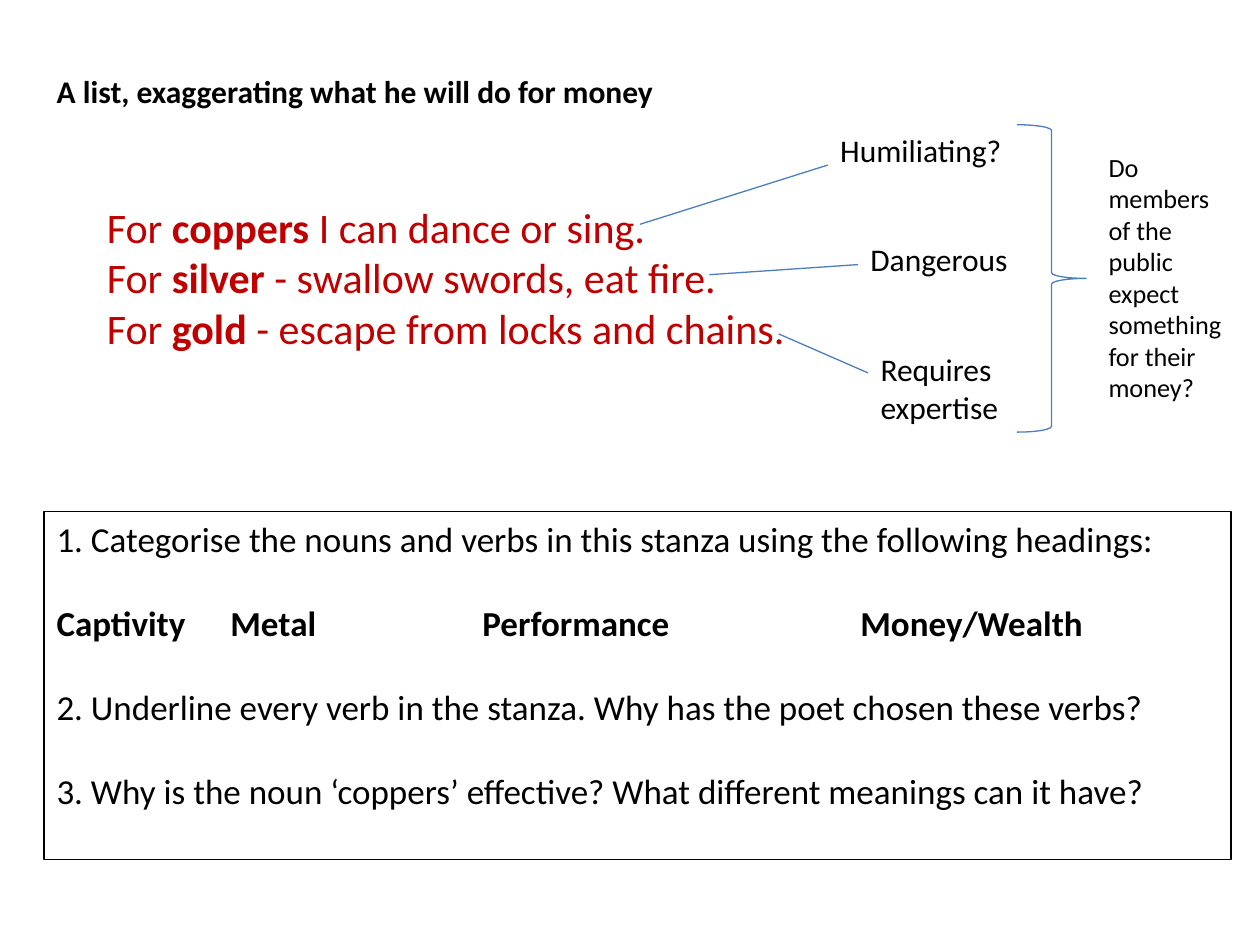
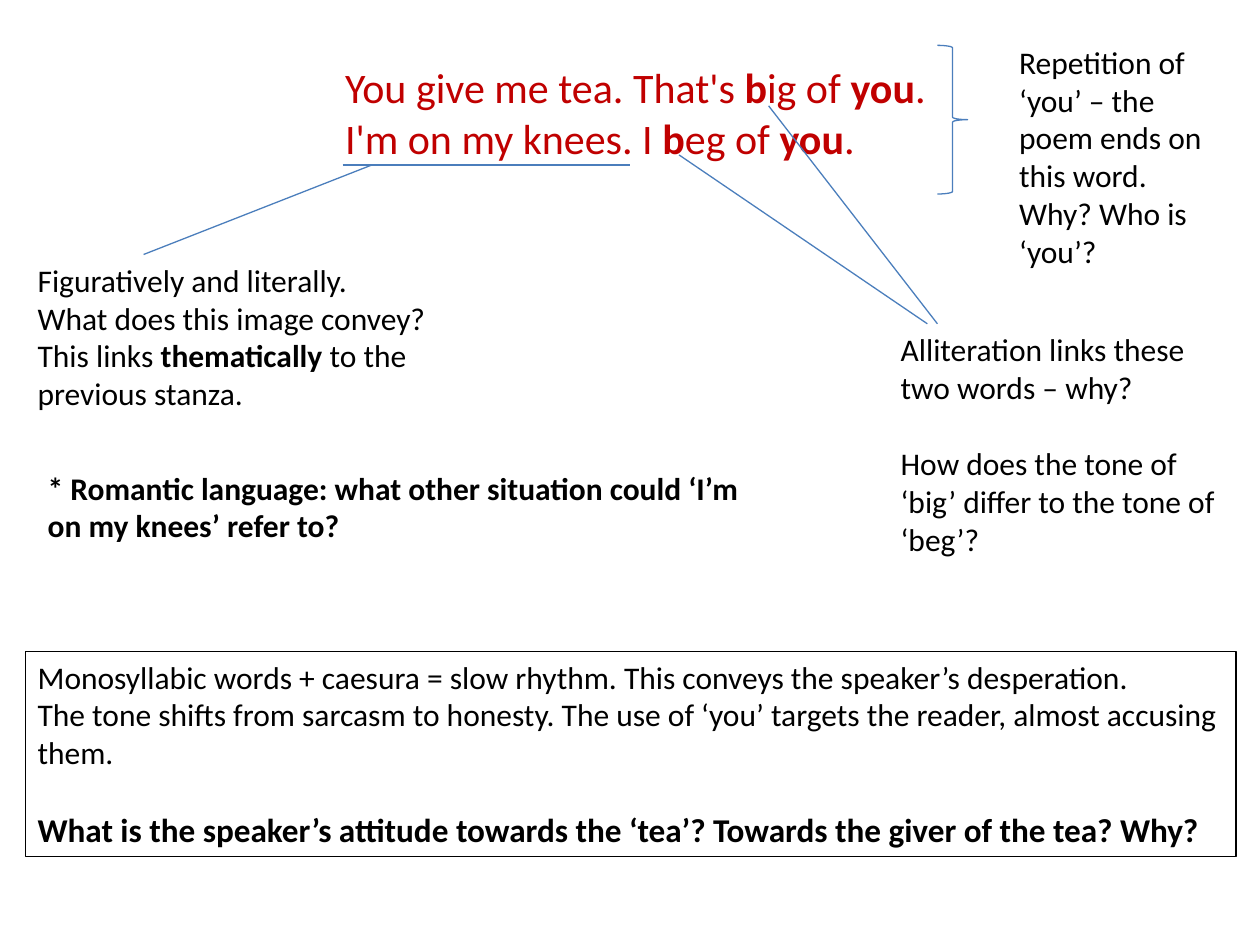
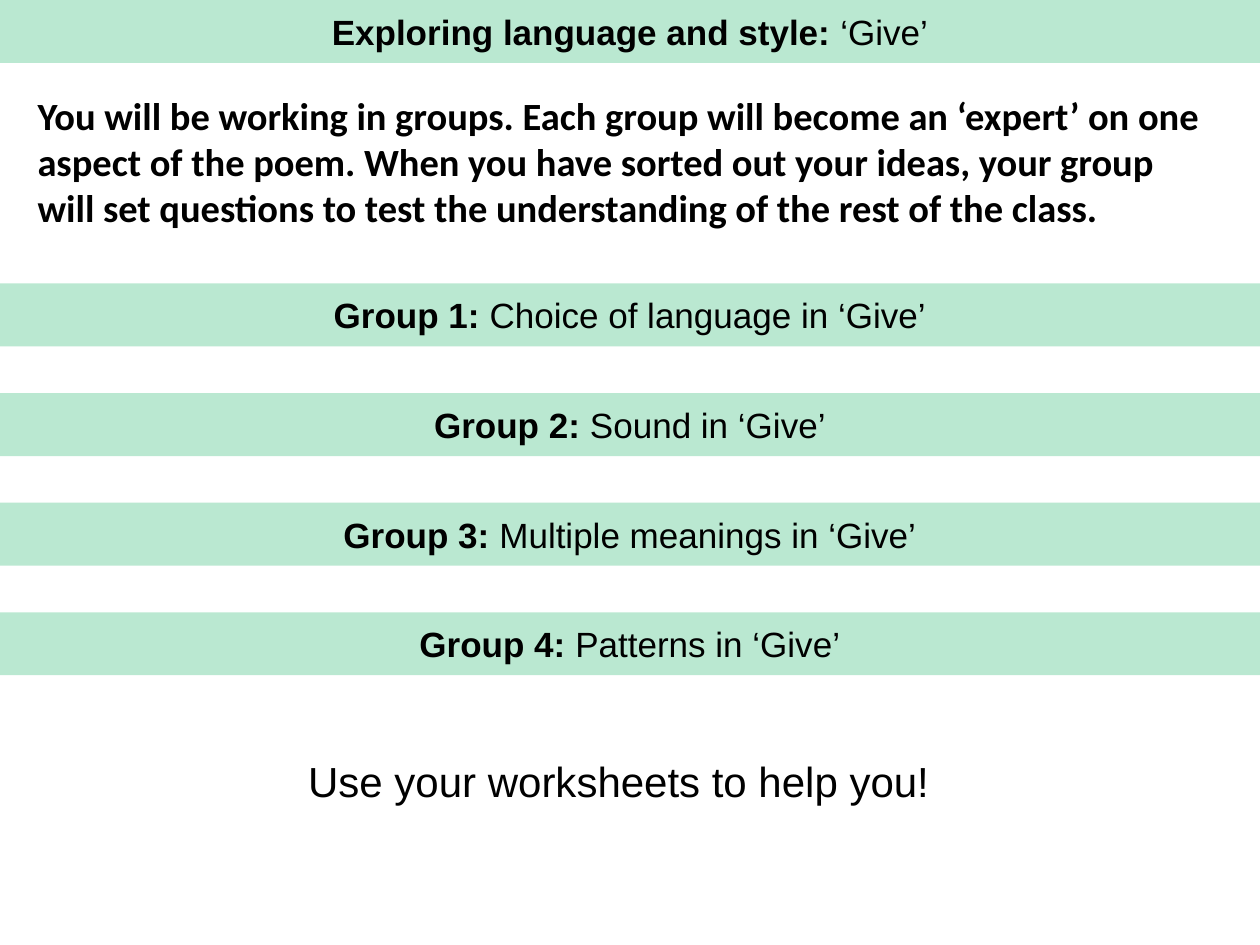
from lxml import etree
from pptx import Presentation
from pptx.dml.color import RGBColor
from pptx.enum.shapes import MSO_CONNECTOR, MSO_SHAPE
from pptx.enum.text import MSO_ANCHOR, MSO_AUTO_SIZE, PP_ALIGN
from pptx.oxml.ns import qn
from pptx.util import Inches, Pt

LEFT, CENTER = PP_ALIGN.LEFT, PP_ALIGN.CENTER
TOP, MIDDLE = MSO_ANCHOR.TOP, MSO_ANCHOR.MIDDLE
FIXED = MSO_AUTO_SIZE.NONE
STRAIGHT = MSO_CONNECTOR.STRAIGHT
RECT, BRACE = MSO_SHAPE.RECTANGLE, MSO_SHAPE.RIGHT_BRACE

BLACK, RED, BLUE, MINT = "000000", "C00000", "4B7EBC", "BAE8D1"
BODY, HEAD = "Calibri", "Arial"
TITLE_ONLY, BLANK = 5, 6
BAND_H = 0.5


def color(code):
    return RGBColor.from_string(code)


def inches(*sizes):
    return [Inches(size) for size in sizes]


def set_tabs(para, stops):
    tabs = etree.SubElement(para._p.get_or_add_pPr(), qn("a:tabLst"))
    for stop in stops:
        etree.SubElement(tabs, qn("a:tab"), pos=str(Inches(stop)), algn="l")


def write(shape, lines, size=18, ink=BLACK, face=BODY, align=LEFT,
          anchor=TOP, gaps=None, tabs=()):
    frame = shape.text_frame
    frame.word_wrap = True
    frame.auto_size = FIXED
    frame.vertical_anchor = anchor
    for i, line in enumerate(lines):
        para = frame.paragraphs[0] if i == 0 else frame.add_paragraph()
        para.alignment = align
        para.space_before = Pt((gaps or {}).get(i, 0))
        if "\t" in line:
            set_tabs(para, tabs)
        font = para.font
        font.name, font.size = face, Pt(size)
        font.color.rgb = color(ink)
        parts = line.split("**")
        whole = len(parts) == 3 and not parts[0] and not parts[2]
        font.bold = whole
        for j, part in enumerate(parts):
            if part:
                run = para.add_run()
                run.text = part
                if len(parts) > 1 and not whole:
                    run.font.bold = j % 2 == 1
    return frame


def add_text(slide, box, lines, **style):
    return write(slide.shapes.add_textbox(*inches(*box)), lines, **style)


def add_form(slide, kind, box, line=None, fill=None):
    shape = slide.shapes.add_shape(kind, *inches(*box))
    shape.shadow.inherit = False
    paint(shape, line, fill)
    return shape


def paint(shape, line, fill):
    if fill:
        shape.fill.solid()
        shape.fill.fore_color.rgb = color(fill)
    else:
        shape.fill.background()
    if line:
        shape.line.color.rgb = color(line)
        shape.line.width = Pt(0.75)
    else:
        shape.line.fill.background()


def add_lines(slide, x, y, ends):
    for x1, y1, x2, y2 in ends:
        link = slide.shapes.add_connector(
            STRAIGHT, *inches(x + x1, y + y1, x + x2, y + y2))
        link.line.color.rgb = color(BLUE)
        link.line.width = Pt(0.75)
        etree.SubElement(link._element.spPr, qn("a:effectLst"))


def add_notes(slide, x, y, notes):
    for left, top, width, height, lines, size in notes:
        add_text(slide, (x + left, y + top, width, height), lines, size=size)


def add_title(slide, box, text, **style):
    title = slide.shapes.title
    title.left, title.top, title.width, title.height = inches(*box)
    write(title, [text], **style)
    return title


def add_band(slide, box, text):
    write(add_form(slide, RECT, box, fill=MINT), [text], size=20,
          face=HEAD, align=CENTER, anchor=MIDDLE)


def add_task(slide, box, lines, **style):
    return write(add_form(slide, RECT, box, line=BLACK), lines, **style)


def list_verse(slide, x, y):
    add_text(slide, (x, y + 0.56, 5.61, 1.31), [
        "For **coppers** I can dance or sing.",
        "For **silver** - swallow swords, eat fire.",
        "For **gold** - escape from locks and chains.",
    ], size=24, ink=RED)
    add_lines(slide, x, y, [
        (4.33, 0.79, 5.82, 0.32),
        (4.88, 1.19, 6.06, 1.11),
        (5.43, 1.66, 6.14, 1.97),
    ])
    add_notes(slide, x, y, [
        (5.82, 0, 1.5, 0.4, ["Humiliating?"], 18),
        (6.06, 0.87, 1.3, 0.4, ["Dangerous"], 18),
        (6.14, 1.74, 1.5, 0.71, ["Requires expertise"], 18),
        (7.95, 0.16, 1.1, 2.12, ["Do members of the public expect "
                                 "something for their money?"], 15),
    ])
    add_form(slide, BRACE, (x + 7.32, y, 0.55, 2.44), line=BLUE)


def end_verse(slide, x, y):
    add_text(slide, (x + 2.44, y + 0.15, 5, 0.91), [
        "You give me tea. That's **b**ig of **you**.",
        "I'm on my knees. I **b**eg of **you**.",
    ], size=24, ink=RED)
    add_lines(slide, x, y, [
        (5.19, 0.94, 7.16, 2.28),
        (5.9, 0.55, 7.24, 2.28),
        (2.52, 1.02, 4.8, 1.02),
        (2.75, 1.02, 0.94, 1.73),
    ])
    add_form(slide, BRACE, (x + 7.24, y + 0.07, 0.24, 1.18), line=BLUE)
    add_notes(slide, x, y, [
        (7.79, 0, 1.65, 1.92, ["Repetition of ‘you’ – the poem ends on "
                               "this word. Why? Who is ‘you’?"], 18),
        (0, 1.73, 3.31, 1.31, [
            "Figuratively and literally.",
            "What does this image convey?",
            "This links **thematically** to the previous stanza."], 18),
        (0.08, 3.38, 5.91, 0.71, [
            "*** Romantic language: what other situation could ‘I’m "
            "on my knees’ refer to?**"], 18),
    ])
    add_text(slide, (x + 6.85, y + 2.28, 2.76, 1.92), [
        "Alliteration links these two words – why?",
        "How does the tone of ‘big’ differ to the tone of ‘beg’?",
    ], gaps={1: 22})


def add_groups(slide, x, y, width):
    topics = ["Choice of language", "Sound", "Multiple meanings", "Patterns"]
    for i, topic in enumerate(topics):
        add_band(slide, (x, y + i * 0.87, width, BAND_H),
                 f"**Group {i + 1}: **{topic} in ‘Give’")


def list_slide(deck):
    slide = deck.slides.add_slide(deck.slide_layouts[TITLE_ONLY])
    add_title(slide, (0.35, 0.52, 4.98, 0.4),
              "**A list, exaggerating what he will do for money**")
    list_verse(slide, 0.75, 0.99)
    add_task(slide, (0.35, 4.06, 9.42, 2.76), [
        "1. Categorise the nouns and verbs in this stanza using the "
        "following headings:",
        "**Captivity\tMetal\tPerformance\tMoney/Wealth**",
        "2. Underline every verb in the stanza. Why has the poet chosen "
        "these verbs?",
        "3. Why is the noun ‘coppers’ effective? What different meanings "
        "can it have?",
    ], size=20, gaps={1: 24, 2: 24, 3: 24}, tabs=(1.38, 3.38, 6.38))


def end_slide(deck):
    slide = deck.slides.add_slide(deck.slide_layouts[BLANK])
    end_verse(slide, 0.2, 0.29)
    frame = add_task(slide, (0.2, 5.17, 9.61, 1.63), [
        "Monosyllabic words + caesura = slow rhythm. This conveys the "
        "speaker’s desperation.",
        "The tone shifts from sarcasm to honesty. The use of ‘you’ targets "
        "the reader, almost accusing them.",
        "**What is the speaker’s attitude towards the ‘tea’? Towards the "
        "giver of the tea? Why?**",
    ], gaps={2: 22})
    frame.paragraphs[2].font.size = Pt(19)


def group_slide(deck):
    slide = deck.slides.add_slide(deck.slide_layouts[TITLE_ONLY])
    title = add_title(slide, (0, 0, 10, BAND_H),
                      "**Exploring language and style: **‘Give’", size=20,
                      face=HEAD, align=CENTER, anchor=MIDDLE)
    paint(title, None, MINT)
    add_text(slide, (0.2, 0.68, 9.53, 1.21), [
        "**You will be working in groups. Each group will become an "
        "‘expert’ on one aspect of the poem. When you have sorted out your "
        "ideas, your group will set questions to test the understanding of "
        "the rest of the class.**"], size=22)
    add_groups(slide, 0, 2.25, 10)
    add_text(slide, (0.38, 5.95, 9.06, 0.5),
             ["Use your worksheets to help you!"],
             size=24, face=HEAD, align=CENTER)


def main():
    deck = Presentation()
    deck.slide_width, deck.slide_height = inches(10, 7.5)
    list_slide(deck)
    end_slide(deck)
    group_slide(deck)
    deck.save("out.pptx")


if __name__ == "__main__":
    main()
